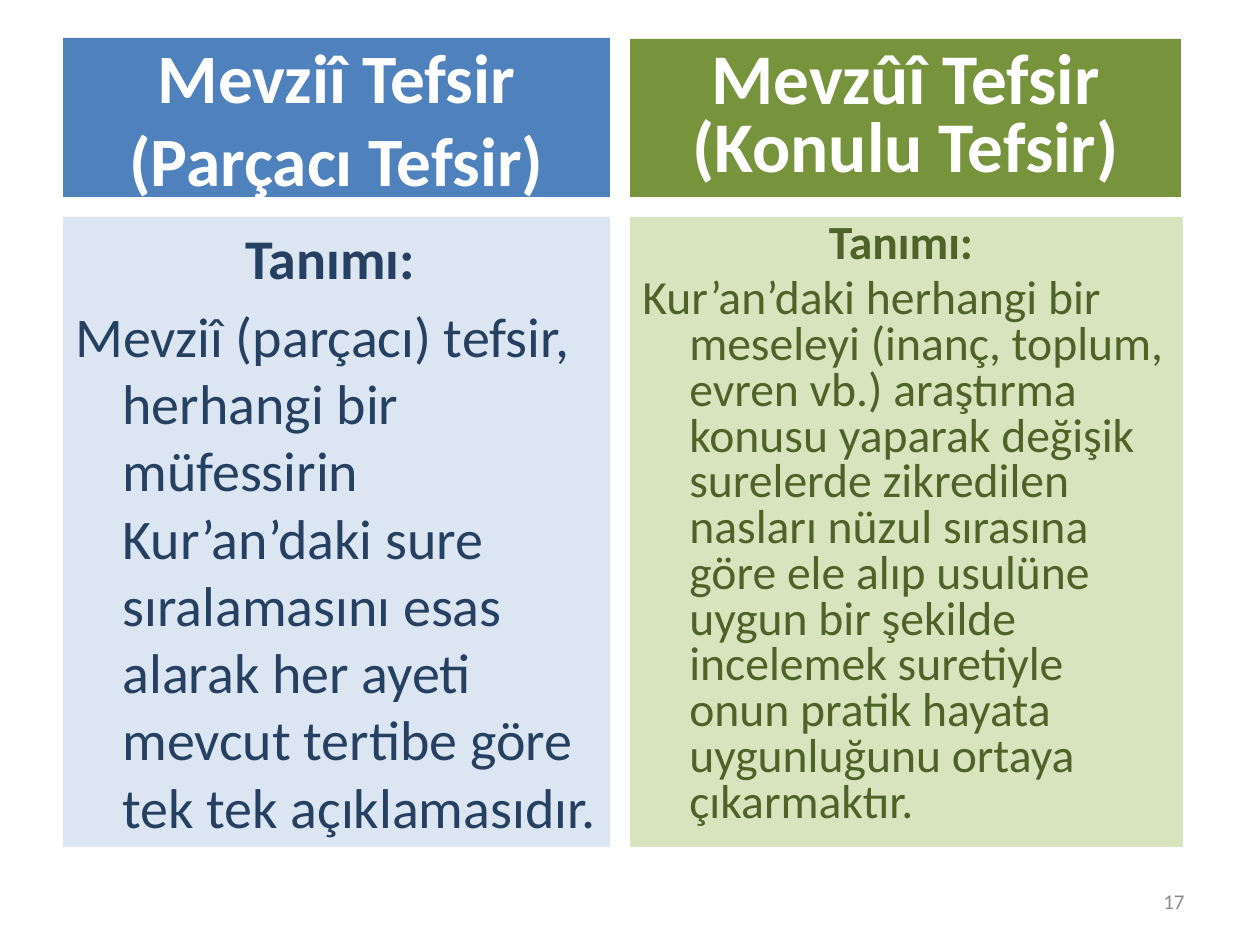
import pptx
import pptx.dml.color
import pptx.enum.shapes
import pptx.enum.text
import pptx.util

PX = 914400 / 126  # EMU in one px
FONT = "Calibri"
COLORS = {
    "white": "FFFFFF",
    "blue": "4F81BD", "blue_tint": "DCE6F2", "blue_text": "254061",
    "green": "77933C", "green_tint": "D7E4BD", "green_text": "4F6228",
    "number": "8C8C8C",
}
ALIGN = pptx.enum.text.PP_ALIGN
ANCHOR = pptx.enum.text.MSO_ANCHOR


def emu(px):
    return pptx.util.Emu(round(px * PX))


def rgb(name):
    return pptx.dml.color.RGBColor.from_string(COLORS[name])


def place(sp, box):
    sp.left, sp.top, sp.width, sp.height = map(emu, box)


def set_frame(tf, anchor):
    tf.word_wrap = True
    tf.auto_size = pptx.enum.text.MSO_AUTO_SIZE.NONE
    tf.vertical_anchor = anchor


def add_text(tf, text, *, size, color, bold=False, align=ALIGN.LEFT,
             spacing=1.0, before=0, hanging=0):
    """Add one paragraph; the first call fills the empty one."""
    p = tf.paragraphs[0] if not tf.text else tf.add_paragraph()
    p.text = text
    p.alignment = align
    p.line_spacing = spacing
    p.space_before = pptx.util.Pt(before)
    if hanging:
        pPr = p._p.get_or_add_pPr()
        pPr.set("marL", str(emu(hanging)))
        pPr.set("indent", str(-emu(hanging)))
    for r in p.runs:
        r.font.name = FONT
        r.font.size = pptx.util.Pt(size)
        r.font.bold = bold
        r.font.color.rgb = rgb(color)


def add_panel(s, box, fill):
    sp = s.shapes.add_shape(pptx.enum.shapes.MSO_SHAPE.RECTANGLE, *map(emu, box))
    sp.shadow.inherit = False
    sp.line.fill.background()
    fill_panel(sp, fill)
    return sp


def fill_panel(sp, fill):
    sp.fill.solid()
    sp.fill.fore_color.rgb = rgb(fill)


def fill_heading(sp, paragraphs, *, size, spacing=1.0):
    set_frame(sp.text_frame, ANCHOR.MIDDLE)
    for text in paragraphs:
        add_text(sp.text_frame, text, size=size, color="white", bold=True,
                 align=ALIGN.CENTER, spacing=spacing)


def add_definition(s, box, text, *, fill, color, size, spacing=1.0):
    tf = add_panel(s, box, fill).text_frame
    set_frame(tf, ANCHOR.TOP)
    style = dict(size=size, color=color, spacing=spacing,
                 before=round(size * 0.2, 1), hanging=47)
    add_text(tf, "Tanımı: ", bold=True, align=ALIGN.CENTER, **style)
    add_text(tf, text, **style)


def add_page_number(s, box, number):
    tf = s.shapes.add_textbox(*map(emu, box)).text_frame
    set_frame(tf, ANCHOR.MIDDLE)
    add_text(tf, number, size=12, color="number", align=ALIGN.RIGHT)


def main():
    prs = pptx.Presentation()
    prs.slide_width, prs.slide_height = emu(1260), emu(945)
    s = prs.slides.add_slide(prs.slide_layouts[5])

    # Left column: the slide title and its definition
    title = s.shapes.title
    place(title, (63, 38, 547, 159))
    fill_panel(title, "blue")
    fill_heading(title, ["Mevziî Tefsir\v(Parçacı Tefsir)"], size=39.6)
    add_definition(
        s, (63, 217, 547, 630),
        "Mevziî (parçacı) tefsir, herhangi bir müfessirin Kur’an’daki sure "
        "sıralamasını esas alarak her ayeti mevcut tertibe göre tek tek "
        "açıklamasıdır.",
        fill="blue_tint", color="blue_text", size=32)

    # Right column: tighter lines
    add_definition(
        s, (630, 217, 553, 630),
        "Kur’an’daki herhangi bir meseleyi (inanç, toplum, evren vb.) "
        "araştırma konusu yaparak değişik surelerde zikredilen nasları nüzul "
        "sırasına göre ele alıp usulüne uygun bir şekilde incelemek suretiyle "
        "onun pratik hayata uygunluğunu ortaya çıkarmaktır.",
        fill="green_tint", color="green_text", size=27.2, spacing=0.8)
    heading = add_panel(s, (630, 39, 551, 158), "green")
    fill_heading(heading, ["Mevzûî Tefsir", "(Konulu Tefsir)"],
                 size=40.7, spacing=0.8)

    # Page number
    add_page_number(s, (903, 876, 294, 50), "17")

    prs.save("out.pptx")


if __name__ == "__main__":
    main()
